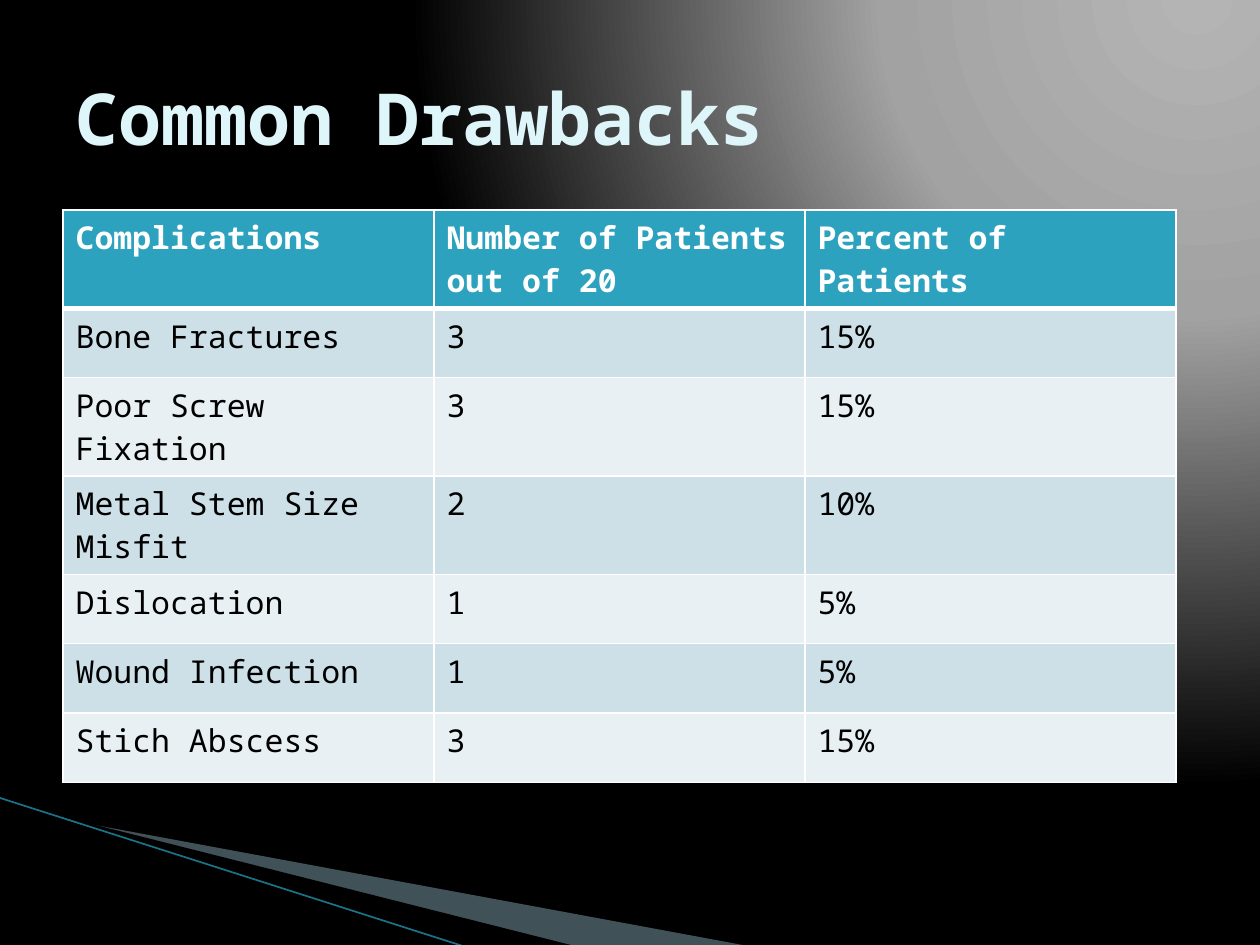
from typing import NamedTuple

from lxml.etree import SubElement
from pptx import Presentation
from pptx.dml.color import RGBColor
from pptx.enum.shapes import MSO_CONNECTOR
from pptx.enum.text import MSO_ANCHOR
from pptx.oxml import parse_xml
from pptx.oxml.ns import nsdecls, qn
from pptx.util import Inches, Pt

FONT = "Noto Sans Mono"
WHITE = RGBColor(0xFF, 0xFF, 0xFF)
BLACK = RGBColor(0, 0, 0)
TITLE = RGBColor(0xDE, 0xF5, 0xFA)
HEADER = RGBColor(0x2D, 0xA2, 0xBF)
BANDS = (RGBColor(0xCD, 0xE0, 0xE8), RGBColor(0xE8, 0xF0, 0xF4))
WEDGE = RGBColor(0xA0, 0xCB, 0xDC)
STROKE = RGBColor(0x1A, 0x74, 0x88)
STOPS = ((0, "B4B4B4"), (40, "A2A2A2"), (100, "000000"))


class Box(NamedTuple):
    left: float
    top: float
    width: float
    height: float


class Wedge(NamedTuple):
    box: Box
    points: tuple
    color: RGBColor
    opacity: int


class Complication(NamedTuple):
    name: str
    patients: str
    percent: str


WEDGES = (
    Wedge(
        Box(0.78, 5.47, 4.16, 1.58),
        ((0.55, 6.51), (5.95, 7.51), (4.56, 7.51), (0.55, 6.5)),
        WEDGE,
        40,
    ),
    Wedge(
        Box(-0.06, 6.33, 4.16, 0.92),
        ((0.53, 6.49), (4.57, 7.51), (3.72, 7.52), (0.54, 6.5)),
        BLACK,
        100,
    ),
)
ROWS = (
    Complication("Complications", "Number of Patients out of 20", "Percent of Patients"),
    Complication("Bone Fractures", "3", "15%"),
    Complication("Poor Screw Fixation", "3", "15%"),
    Complication("Metal Stem Size Misfit", "2", "10%"),
    Complication("Dislocation", "1", "5%"),
    Complication("Wound Infection", "1", "5%"),
    Complication("Stich Abscess", "3", "15%"),
)


def set_background(s) -> None:
    stops = "".join(
        f'<a:gs pos="{pos * 1000}"><a:srgbClr val="{color}"/></a:gs>' for pos, color in STOPS
    )
    bg = parse_xml(
        f'<p:bg {nsdecls("p", "a")}><p:bgPr><a:gradFill rotWithShape="1">'
        f'<a:gsLst>{stops}</a:gsLst><a:path path="circle">'
        '<a:fillToRect l="95000" t="-106000" r="5000" b="206000"/></a:path>'
        "</a:gradFill><a:effectLst/></p:bgPr></p:bg>"
    )
    s.element.cSld.insert(0, bg)


def fit_frame(sp, box: Box) -> None:
    frame = {name: Inches(value) for name, value in box._asdict().items()}
    dx, dy = sp.left - frame["left"], sp.top - frame["top"]
    for pt in sp.element.iter(qn("a:pt")):
        pt.set("x", str(int(pt.get("x")) + dx))
        pt.set("y", str(int(pt.get("y")) + dy))
    for outline in sp.element.iter(qn("a:path")):
        outline.set("w", str(frame["width"]))
        outline.set("h", str(frame["height"]))
    for name, value in frame.items():
        setattr(sp, name, value)


def draw_wedge(s, wedge: Wedge) -> None:
    first, *rest = [(Inches(x), Inches(y)) for x, y in wedge.points]
    builder = s.shapes.build_freeform(*first)
    builder.add_line_segments(rest, close=True)
    sp = builder.convert_to_shape()
    fit_frame(sp, wedge.box)
    sp.shadow.inherit = False
    sp.fill.solid()
    sp.fill.fore_color.rgb = wedge.color
    sp.line.fill.background()
    if wedge.opacity < 100:
        color = sp.element.spPr.find(qn("a:solidFill"))[0]
        SubElement(color, qn("a:alpha"), val=str(wedge.opacity * 1000))


def draw_line(s) -> None:
    line = s.shapes.add_connector(
        MSO_CONNECTOR.STRAIGHT, Inches(-0.01), Inches(6.33), Inches(3.71), Inches(7.52)
    )
    line.line.color.rgb = STROKE
    line.line.width = Pt(0.95)
    SubElement(line.element.spPr, qn("a:effectLst"))


def write_text(tf, text: str, size: int, color: RGBColor, bold: bool) -> None:
    r = tf.paragraphs[0].add_run()
    r.text = text
    r.font.color.rgb = color
    for name, value in {"name": FONT, "size": Pt(size), "bold": bold}.items():
        setattr(r.font, name, value)


def set_borders(cell, top: int, bottom: int) -> None:
    widths = {"lnL": 1, "lnR": 1, "lnT": top, "lnB": bottom}
    for i, (tag, width) in enumerate(widths.items()):
        border = parse_xml(
            f'<a:{tag} {nsdecls("a")} w="{Pt(width)}"><a:solidFill>'
            f'<a:srgbClr val="{WHITE}"/></a:solidFill></a:{tag}>'
        )
        cell._tc.get_or_add_tcPr().insert(i, border)


def draw_table(s) -> None:
    count = len(ROWS)
    table = s.shapes.add_table(
        count, 3, Inches(0.5), Inches(5 / 3), Inches(53 / 6), Inches(0.55 * count)
    ).table
    for row in table.rows:
        row.height = Inches(0.55)
    for i, entry in enumerate(ROWS):
        header = i == 0
        for j, text in enumerate(entry):
            cell = table.cell(i, j)
            cell.fill.solid()
            cell.fill.fore_color.rgb = HEADER if header else BANDS[(i - 1) % 2]
            write_text(cell.text_frame, text, 18, WHITE if header else BLACK, header)
            set_borders(cell, 3 if i == 1 else 1, 3 if header else 1)


def draw_title(s) -> None:
    tf = s.shapes.add_textbox(Inches(0.5), Inches(0.3), Inches(9), Inches(1.25)).text_frame
    for name, value in {"word_wrap": True, "vertical_anchor": MSO_ANCHOR.MIDDLE}.items():
        setattr(tf, name, value)
    write_text(tf, "Common Drawbacks", 41, TITLE, True)


def main() -> None:
    prs = Presentation()
    prs.slide_width, prs.slide_height = Inches(10), Inches(7.5)
    s = prs.slides.add_slide(prs.slide_layouts[6])
    set_background(s)
    for wedge in WEDGES:
        draw_wedge(s, wedge)
    draw_line(s)
    draw_table(s)
    draw_title(s)
    prs.save("out.pptx")


if __name__ == "__main__":
    main()
